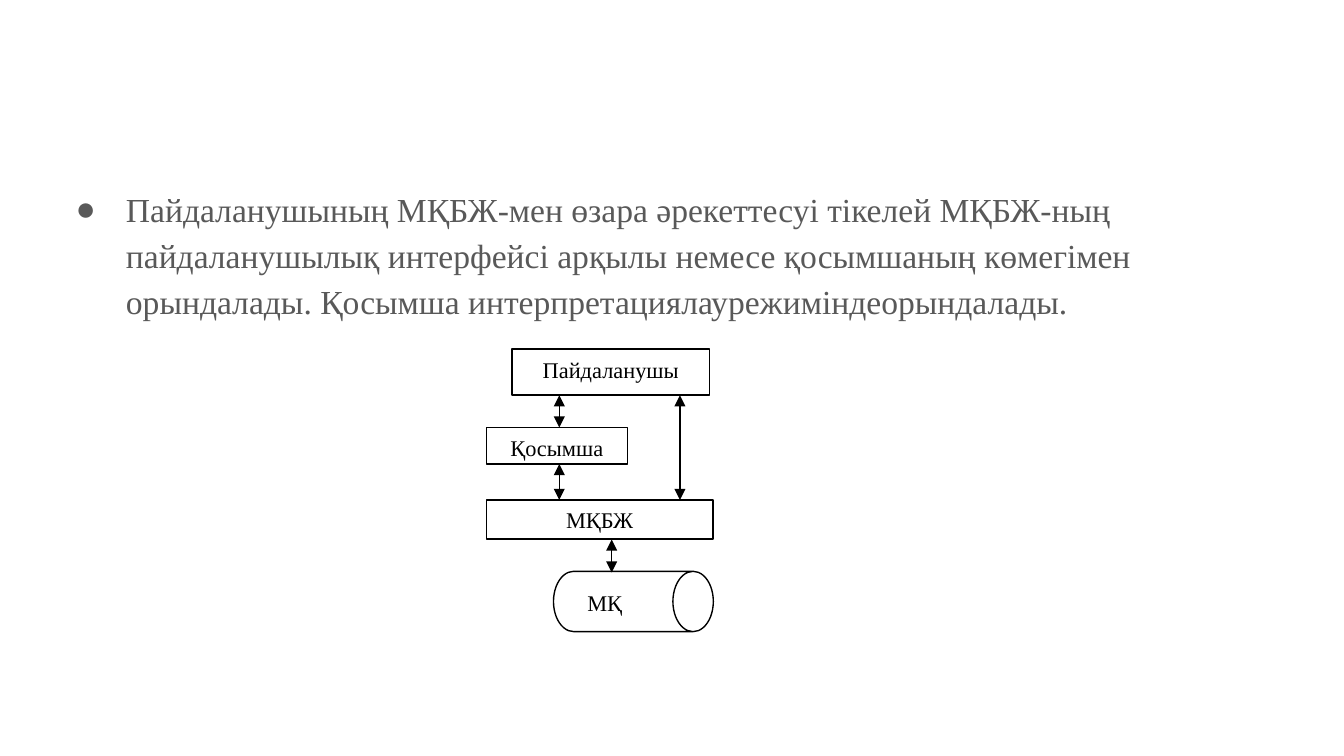
from typing import NamedTuple

from lxml import etree
from pptx import Presentation
from pptx import util as u
from pptx.dml.color import RGBColor
from pptx.enum import shapes, text
from pptx.oxml.ns import qn

FONT = "Times New Roman"
BLACK, WHITE, GREY = "000000", "FFFFFF", "595959"
BODY = (
    "Пайдаланушының МҚБЖ-мен өзара әрекеттесуі тікелей МҚБЖ-ның "
    "пайдаланушылық интерфейсі арқылы немесе қосымшаның көмегімен "
    "орындалады. Қосымша интерпретациялаурежиміндеорындалады."
)


class Box(NamedTuple):
    label: str
    left: float
    top: float
    width: float
    height: float
    edge: str = BLACK
    align: text.PP_ALIGN = text.PP_ALIGN.CENTER


class Link(NamedTuple):
    x: float
    top: float
    end: float


def paint(target, color: str) -> None:
    """Give a fill or a line one solid colour."""
    target.solid()
    target.fore_color.rgb = RGBColor.from_string(color)


def format_all(target, values: dict) -> None:
    for name, value in values.items():
        setattr(target, name, value)


def write(frame, words: str, size: int, color: str):
    """Put one paragraph in a frame and return it."""
    para = frame.paragraphs[0]
    run = para.add_run()
    run.text = words
    format_all(run.font, {"name": FONT, "size": u.Pt(size)})
    run.font.color.rgb = RGBColor.from_string(color)
    return para


def add_form(slide, kind, box: Box):
    form = slide.shapes.add_shape(
        kind, *map(u.Cm, (box.left, box.top, box.width, box.height)))
    form.shadow.inherit = False
    paint(form.fill, WHITE)
    paint(form.line.fill, box.edge)
    form.line.width = u.Pt(0.75)
    if box.label:
        frame = form.text_frame
        format_all(frame, {"word_wrap": True,
                           "vertical_anchor": text.MSO_ANCHOR.TOP})
        write(frame, box.label, 12, BLACK).alignment = box.align
    return form


def add_link(slide, link: Link) -> None:
    """Draw a vertical line with an arrowhead at both ends."""
    line = slide.shapes.add_connector(
        shapes.MSO_CONNECTOR.STRAIGHT,
        *map(u.Cm, (link.x, link.top, link.x, link.end)))
    paint(line.line.fill, BLACK)
    line.line.width = u.Pt(0.75)
    stroke = line.line._get_or_add_ln()
    for end in ("a:headEnd", "a:tailEnd"):
        etree.SubElement(stroke, qn(end), type="triangle")
    etree.SubElement(line._element.spPr, qn("a:effectLst"))


def add_body(slide) -> None:
    body = slide.placeholders[1]
    format_all(body, {"left": u.Cm(0.86), "top": u.Cm(3.2),
                      "width": u.Cm(23.67), "height": u.Cm(9.5)})
    frame = body.text_frame
    format_all(frame, {f"margin_{side}": u.Cm(0.25)
                       for side in ("left", "top", "right", "bottom")})
    format_all(frame, {"word_wrap": True, "auto_size": text.MSO_AUTO_SIZE.NONE,
                       "vertical_anchor": text.MSO_ANCHOR.TOP})
    para = write(frame, BODY, 18, GREY)
    format_all(para, {"line_spacing": 1.15, "space_before": u.Pt(0),
                      "alignment": text.PP_ALIGN.LEFT})
    # Bullet with a hanging indent
    props = para._p.get_or_add_pPr()
    props.set("marL", str(u.Cm(1.27)))
    props.set("indent", str(-u.Cm(0.95)))
    tint = etree.SubElement(props, qn("a:buClr"))
    etree.SubElement(tint, qn("a:srgbClr"), val=GREY)
    etree.SubElement(props, qn("a:buFont"), typeface=FONT)
    etree.SubElement(props, qn("a:buChar"), char="●")


BOXES = [
    Box("Пайдаланушы", 9.68, 6.6, 3.73, 0.87),
    Box("Қосымша", 9.19, 8.08, 2.67, 0.69),
    Box("МҚБЖ", 9.19, 9.45, 4.29, 0.74),
]
STORE = Box("", 11.4, 9.86, 1.14, 3.02)
TAG = Box("МҚ", 10.85, 11.02, 1.63, 0.69, WHITE, text.PP_ALIGN.LEFT)
LINKS = [
    Link(10.57, 7.47, 8.08),
    Link(10.57, 8.77, 9.45),
    Link(11.56, 10.2, 10.82),
    Link(12.85, 7.47, 9.45),
]


def main() -> None:
    deck = Presentation()
    format_all(deck, {"slide_width": u.Cm(25.4), "slide_height": u.Cm(14.29)})
    slide = deck.slides.add_slide(deck.slide_layouts[1])

    # Text without a title
    title = slide.shapes.title._element
    title.getparent().remove(title)
    add_body(slide)

    # Diagram: boxes, then the database drum and its label
    rect = shapes.MSO_SHAPE.RECTANGLE
    for box in BOXES:
        add_form(slide, rect, box)
    drum = add_form(slide, shapes.MSO_SHAPE.CAN, STORE)
    drum.rotation = 90
    drum.adjustments[0] = 0.67
    add_form(slide, rect, TAG)

    # Two-way arrows
    for link in LINKS:
        add_link(slide, link)

    deck.save("out.pptx")


if __name__ == "__main__":
    main()
